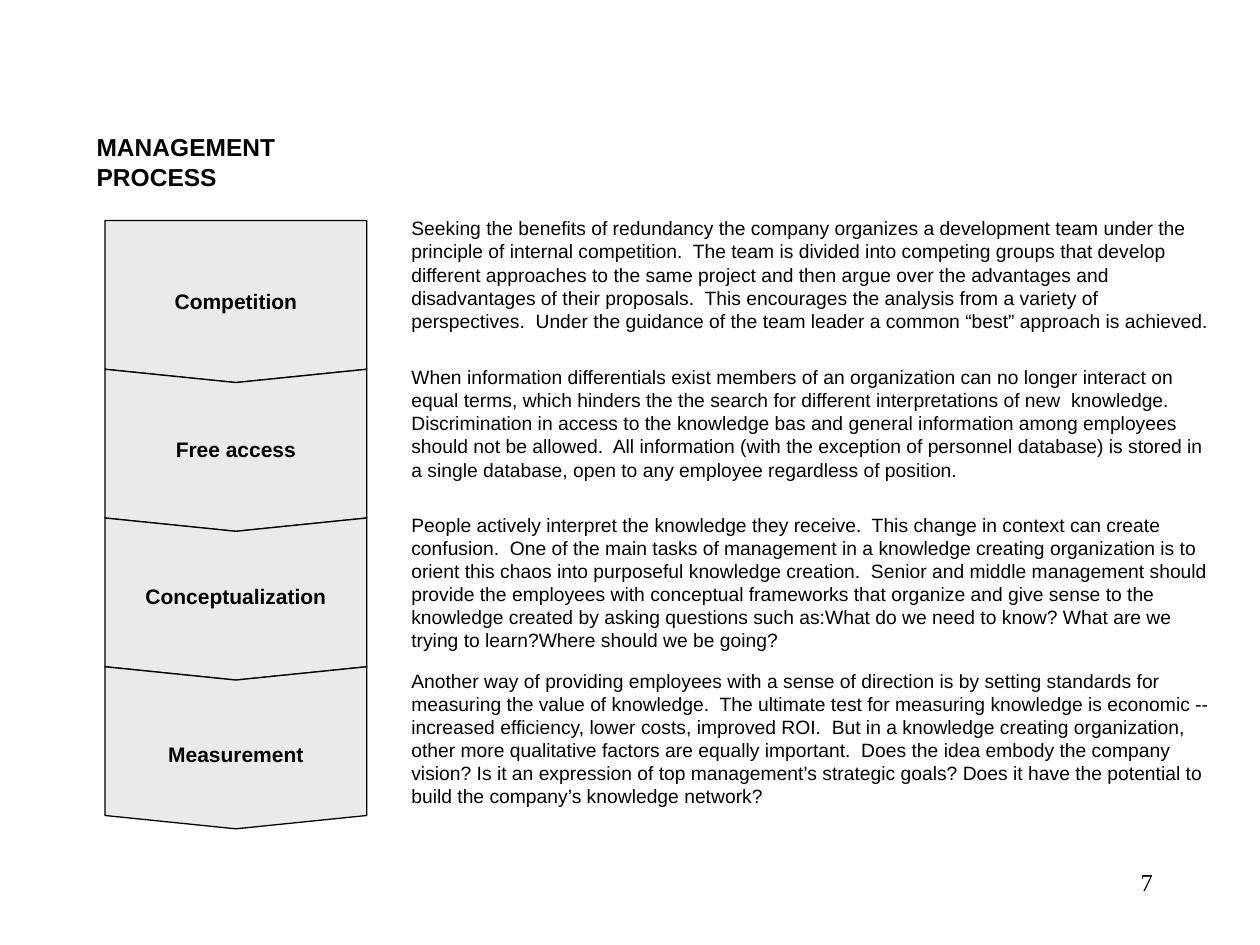
from pptx import Presentation
from pptx.dml.color import RGBColor
from pptx.enum import text
from pptx.util import Pt

TITLE = "MANAGEMENT PROCESS"
PAGE_NUMBER = "7"

# label, label top, description top, description height, description
STEPS = [
    ("Competition", 161.3, 120.2, 73.4,
     "Seeking the benefits of redundancy the company organizes a development team under the "
     "principle of internal competition.  The team is divided into competing groups that develop "
     "different approaches to the same project and then argue over the advantages and "
     "disadvantages of their proposals.  This encourages the analysis from a variety of "
     "perspectives.  Under the guidance of the team leader a common “best” approach is achieved."),
    ("Free access", 246.2, 205.2, 73.4,
     "When information differentials exist members of an organization can no longer interact on "
     "equal terms, which hinders the the search for different interpretations of new  knowledge. "
     "Discrimination in access to the knowledge bas and general information among employees "
     "should not be allowed.  All information (with the exception of personnel database) is stored in "
     "a single database, open to any employee regardless of position."),
    ("Conceptualization", 329.8, 289.6, 86.4,
     "People actively interpret the knowledge they receive.  This change in context can create "
     "confusion.  One of the main tasks of management in a knowledge creating organization is to "
     "orient this chaos into purposeful knowledge creation.  Senior and middle management should "
     "provide the employees with conceptual frameworks that organize and give sense to the "
     "knowledge created by asking questions such as:What do we need to know? What are we "
     "trying to learn?Where should we be going?"),
    ("Measurement", 420, 378.8, 86.4,
     "Another way of providing employees with a sense of direction is by setting standards for "
     "measuring the value of knowledge.  The ultimate test for measuring knowledge is economic -- "
     "increased efficiency, lower costs, improved ROI.  But in a knowledge creating organization, "
     "other more qualitative factors are equally important.  Does the idea embody the company "
     "vision? Is it an expression of top management’s strategic goals? Does it have the potential to "
     "build the company’s knowledge network?"),
]

LEFT, TOP, WIDTH, PITCH, POINT = 60, 126, 149.6, 85, 7.6


def color(value):
    return RGBColor.from_string(value)


def write(box, words, size, bold=False, font="Arial", align=text.PP_ALIGN.LEFT, wrap=True):
    frame = box.text_frame
    frame.word_wrap = wrap
    frame.auto_size = text.MSO_AUTO_SIZE.NONE
    frame.vertical_anchor = text.MSO_ANCHOR.TOP
    para = frame.paragraphs[0]
    para.alignment = align
    span = para.add_run()
    span.text = words
    span.font.name, span.font.size, span.font.bold = font, Pt(size), bold
    span.font.color.rgb = color("000000")


def add_text(page, left, top, width, height, words, size, **style):
    box = page.shapes.add_textbox(Pt(left), Pt(top), Pt(width), Pt(height))
    write(box, words, size, **style)


def add_arrow(page, top, notch):
    """Draw a block that points down; notch is the depth of the dent in its top."""
    right, middle, bottom = LEFT + WIDTH, LEFT + WIDTH / 2, top + PITCH
    corners = [(right, top), (right, bottom), (middle, bottom + POINT),
               (LEFT, bottom), (LEFT, top), (middle, top + notch)]
    points = [(Pt(x), Pt(y)) for x, y in corners]
    builder = page.shapes.build_freeform(*points[0])
    builder.add_line_segments(points[1:], close=True)
    arrow = builder.convert_to_shape()
    arrow.shadow.inherit = False
    arrow.fill.solid()
    arrow.fill.fore_color.rgb = color("EAEAEA")
    arrow.line.color.rgb = color("000000")
    arrow.line.width = Pt(0.75)


def main():
    deck = Presentation()
    deck.slide_width, deck.slide_height = Pt(720), Pt(540)
    page = deck.slides.add_slide(deck.slide_layouts[5])

    title = page.shapes.title
    title.left, title.top, title.width, title.height = Pt(48), Pt(72), Pt(189), Pt(24.2)
    write(title, TITLE, 14, bold=True, wrap=False)

    for index in range(len(STEPS)):
        add_arrow(page, TOP + index * PITCH, POINT if index else 0)

    for label, label_top, top, height, description in STEPS:
        add_text(page, LEFT, label_top, WIDTH, 21.6, label, 12, bold=True,
                 align=text.PP_ALIGN.CENTER)
        add_text(page, 228, top, 475.2, height, description, 11)

    add_text(page, 516, 492, 150, 36, PAGE_NUMBER, 14, font="Times New Roman",
             align=text.PP_ALIGN.RIGHT)
    deck.save("out.pptx")


if __name__ == "__main__":
    main()
